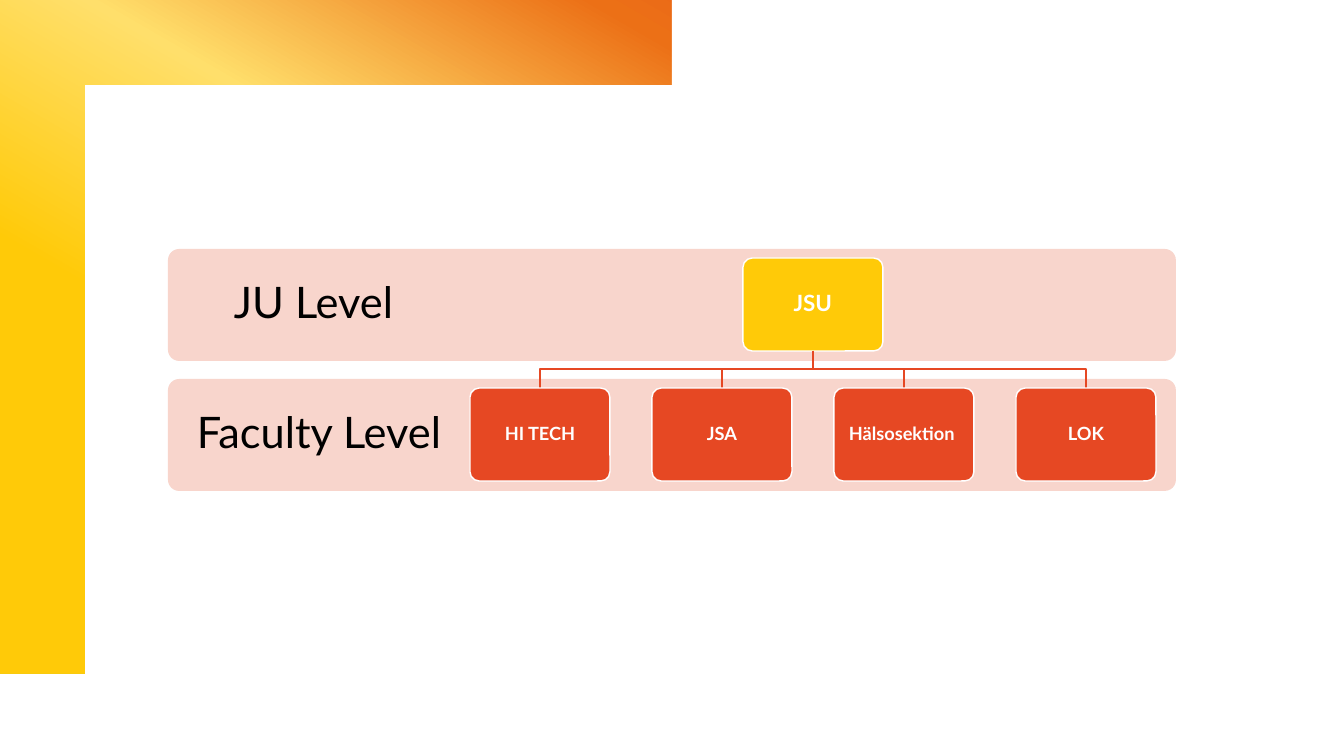
import pptx
import pptx.util
import pptx.dml.color
import pptx.enum.shapes
import pptx.enum.text
import pptx.oxml
import pptx.oxml.ns

PX = 914400 / 100.8  # EMU in one px
COLORS = {"white": "FFFFFF", "black": "000000", "band": "F8D5CC",
          "yellow": "FFCA08", "red": "E64823"}
FRAME_STOPS = [(10, "E64823"), (30, "EC7016"), (50, "FFDF6B"),
               (70, "FFCA08"), (90, "FFCA08")]
SHAPE = pptx.enum.shapes.MSO_SHAPE


def add_box(kind, x, y, w, h, fill, line=None):
    sp = slide.shapes.add_shape(kind, *(round(v * PX) for v in (x, y, w, h)))
    sp.shadow.inherit = False
    sp.fill.solid()
    sp.fill.fore_color.rgb = pptx.dml.color.RGBColor.from_string(COLORS[fill])
    if line:
        sp.line.color.rgb = pptx.dml.color.RGBColor.from_string(COLORS[line])
        sp.line.width = pptx.util.Pt(1)
    else:
        sp.line.fill.background()
    if kind == SHAPE.ROUNDED_RECTANGLE:
        sp.adjustments[0] = 0.1
    return sp


def add_label(sp, text, size, color, bold, inset):
    tf = sp.text_frame
    tf.word_wrap = True
    tf.vertical_anchor = pptx.enum.text.MSO_ANCHOR.MIDDLE
    tf.margin_left = tf.margin_right = round(inset * PX)
    tf.margin_top = tf.margin_bottom = round(inset * PX)
    p = tf.paragraphs[0]
    p.alignment = pptx.enum.text.PP_ALIGN.CENTER
    p.line_spacing = 0.9
    r = p.add_run()
    r.text = text
    r.font.name = "Lato"
    r.font.size = pptx.util.Pt(size)
    r.font.bold = bold
    r.font.color.rgb = pptx.dml.color.RGBColor.from_string(COLORS[color])


prs = pptx.Presentation()
prs.slide_width = round(1344 * PX)
prs.slide_height = round(756 * PX)
slide = prs.slides.add_slide(prs.slide_layouts[6])

# Gradient frame, with its right half covered in white
W, H, EDGE = 1344, 673, 85
fb = slide.shapes.build_freeform(0, 0, scale=PX)
fb.add_line_segments([(W, 0), (W, H), (W - EDGE, H), (W - EDGE, EDGE),
                      (EDGE, EDGE), (EDGE, H), (0, H)], close=True)
frame = fb.convert_to_shape()
frame.shadow.inherit = False
frame.line.fill.background()
frame.fill.gradient()
frame.fill.gradient_angle = 240  # counter-clockwise
stops = frame.fill._fill._gradFill.find(pptx.oxml.ns.qn("a:gsLst"))
for gs in list(stops):
    stops.remove(gs)
for pos, color in FRAME_STOPS:
    stops.append(pptx.oxml.parse_xml(
        f'<a:gs {pptx.oxml.ns.nsdecls("a")} pos="{pos * 1000}">'
        f'<a:srgbClr val="{color}"/></a:gs>'))
add_box(SHAPE.RECTANGLE, 672, 0, 672, 756, "white")

# Level bands with their labels
BAND_X, BAND_H = 168, 112
JU_Y, FACULTY_Y = 249, 379
for text, y in [("JU Level ", JU_Y), ("Faculty Level", FACULTY_Y)]:
    add_box(SHAPE.ROUNDED_RECTANGLE, BAND_X, y, 1008, BAND_H, "band")
    box = slide.shapes.add_textbox(
        *(round(v * PX) for v in (BAND_X, y, 302, BAND_H)))
    add_label(box, text, 31, "black", False, 24)

# Organisation tree: the union on top, its sections below
CARD_W, CARD_H, PAD = 140, 93, 9
ROOT_X = 813  # centre of the tree
root_y, section_y = JU_Y + PAD, FACULTY_Y + PAD
root_bottom = root_y + CARD_H
bus_y = (root_bottom + section_y) // 2
root = add_box(SHAPE.ROUNDED_RECTANGLE, ROOT_X - CARD_W // 2, root_y,
               CARD_W, CARD_H, "yellow", "white")
add_label(root, "JSU", 16, "white", True, 10)

for i, name in enumerate(["HI TECH", "JSA", "Hälsosektion ", "LOK"]):
    x = ROOT_X + (2 * i - 3) * 91
    fb = slide.shapes.build_freeform(ROOT_X, root_bottom, scale=PX)
    fb.add_line_segments([(ROOT_X, bus_y), (x, bus_y), (x, section_y)],
                         close=False)
    branch = fb.convert_to_shape()
    branch.shadow.inherit = False
    branch.fill.background()
    branch.line.color.rgb = pptx.dml.color.RGBColor.from_string(COLORS["red"])
    branch.line.width = pptx.util.Pt(1)
    card = add_box(SHAPE.ROUNDED_RECTANGLE, x - CARD_W // 2, section_y,
                   CARD_W, CARD_H, "red", "white")
    add_label(card, name, 13, "white", True, 8)

prs.save("out.pptx")
